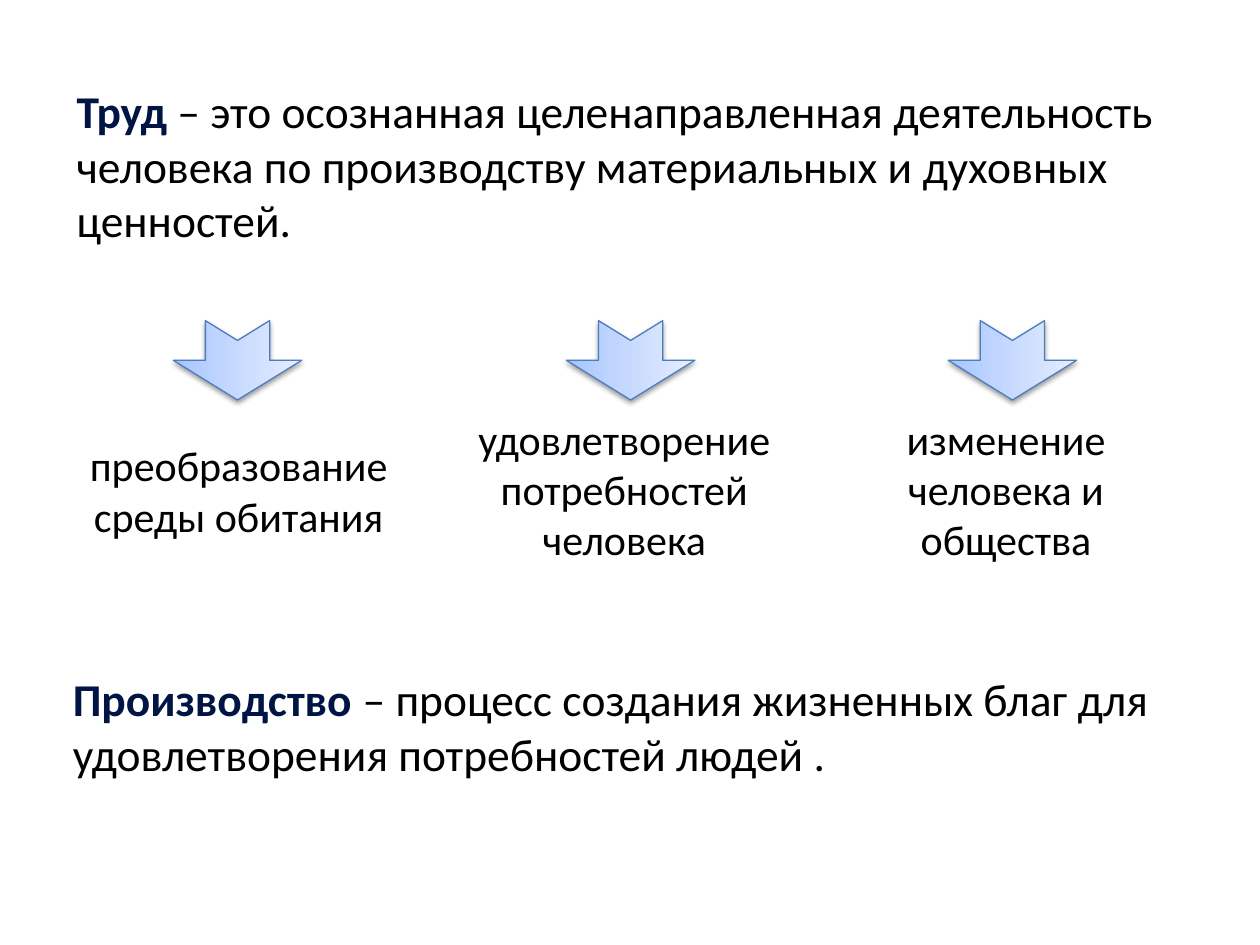
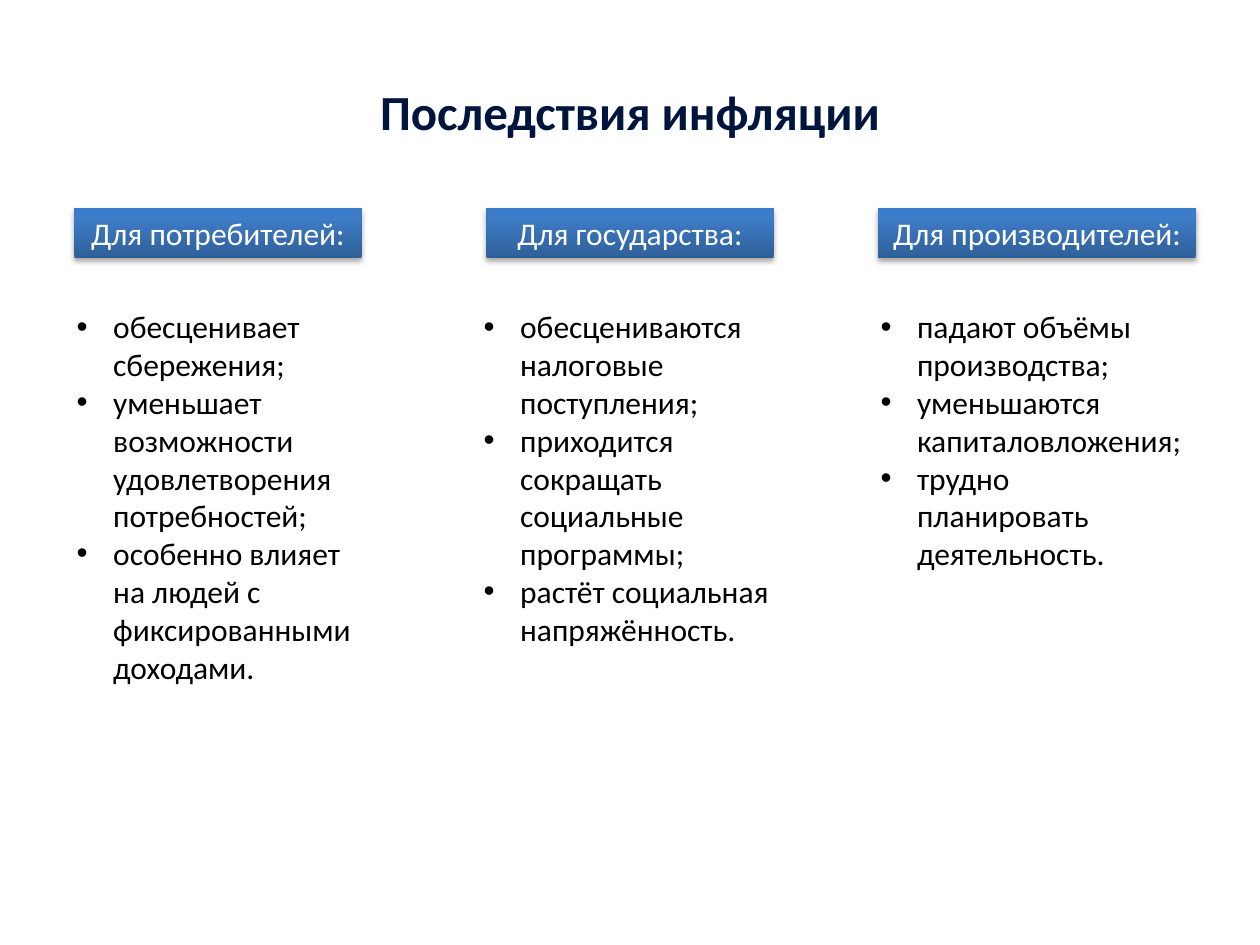
from dataclasses import dataclass

from lxml import etree
from pptx import Presentation
from pptx import util as u
from pptx.dml.color import RGBColor
from pptx.enum import shapes, text
from pptx.oxml.ns import qn


@dataclass(frozen=True)
class Theme:
    font: str = "Calibri"
    term: str = "001543"
    title: str = "00153E"
    body: str = "000000"
    light: str = "FFFFFF"
    arrow_line: str = "4B7EBC"
    arrow_stops: tuple = ((0, "A4C4FF"), (35, "BFD4FF"), (100, "E6EEFF"))
    header_stops: tuple = ((0, "2F5F99"), (80, "3D7CC7"), (100, "3A7CCB"))
    title_size: int = 28
    definition_size: int = 26
    label_size: int = 24
    list_size: int = 18
    bullet_indent: float = 0.29


THEME = Theme()


# Text
def add_bullet(paragraph):
    properties = paragraph._p.get_or_add_pPr()
    indent = u.Inches(THEME.bullet_indent)
    properties.set("marL", str(indent))
    properties.set("indent", str(-indent))
    etree.SubElement(properties, qn("a:buFont")).set("typeface", "Arial")
    etree.SubElement(properties, qn("a:buChar")).set("char", "•")


def write_text(frame, paragraphs, *, size, color=THEME.body, align=None, bullets=False):
    """Fill a frame; each paragraph is a string or a list of (text, color, bold)."""
    frame.word_wrap = True
    for index, content in enumerate(paragraphs):
        paragraph = frame.add_paragraph() if index else frame.paragraphs[0]
        if bullets:
            add_bullet(paragraph)
        paragraph.alignment = align
        runs = [(content, color, False)] if isinstance(content, str) else content
        for words, run_color, bold in runs:
            run = paragraph.add_run()
            run.text = words
            run.font.name = THEME.font
            run.font.size = u.Pt(size)
            run.font.bold = bold
            run.font.color.rgb = RGBColor.from_string(run_color)


def add_text(slide, box, paragraphs, **text_format):
    frame = slide.shapes.add_textbox(*map(u.Inches, box)).text_frame
    write_text(frame, paragraphs, **text_format)
    frame.auto_size = text.MSO_AUTO_SIZE.SHAPE_TO_FIT_TEXT


def add_definition(slide, box, term, meaning):
    runs = [(term + " ", THEME.term, True), (meaning, THEME.body, False)]
    add_text(slide, box, [runs], size=THEME.definition_size)


# Shapes
def add_gradient_shape(slide, kind, box, stops, *, shadow_opacity, shadow_distance):
    shape = slide.shapes.add_shape(kind, *map(u.Inches, box))
    shape.fill.gradient()
    shape.fill.gradient_angle = 90
    properties = shape._element.spPr
    stop_list = properties.find(".//" + qn("a:gsLst"))
    stop_list.clear()
    for position, color in stops:
        stop = etree.SubElement(stop_list, qn("a:gs"), pos=str(position * 1000))
        etree.SubElement(stop, qn("a:srgbClr"), val=color)
    shape.line.fill.background()

    shape.shadow.inherit = False
    shadow = etree.SubElement(
        properties.find(qn("a:effectLst")), qn("a:outerShdw"),
        blurRad=str(u.Pt(3.1)), dist=str(u.Pt(shadow_distance)),
        dir="5400000", rotWithShape="0")
    shadow_color = etree.SubElement(shadow, qn("a:srgbClr"), val=THEME.body)
    etree.SubElement(shadow_color, qn("a:alpha"), val=str(shadow_opacity * 1000))
    return shape


def add_down_arrow(slide, left):
    arrow = add_gradient_shape(
        slide, shapes.MSO_SHAPE.NOTCHED_RIGHT_ARROW, (left, 2.35, 0.63, 1.02),
        THEME.arrow_stops, shadow_opacity=38, shadow_distance=1.6)
    arrow.rotation = 90
    arrow.line.color.rgb = RGBColor.from_string(THEME.arrow_line)
    arrow.line.width = u.Pt(0.75)


def add_header(slide, left, width, caption):
    header = add_gradient_shape(
        slide, shapes.MSO_SHAPE.RECTANGLE, (left, 1.65, width, 0.4),
        THEME.header_stops, shadow_opacity=35, shadow_distance=1.8)
    header.text_frame.vertical_anchor = text.MSO_ANCHOR.MIDDLE
    write_text(header.text_frame, [caption], size=THEME.list_size,
               color=THEME.light, align=text.PP_ALIGN.CENTER)


# Slides
def build_labour_slide(slide):
    add_definition(slide, (0.51, 0.61, 8.9, 1.41), "Труд",
                   "– это осознанная целенаправленная деятельность человека "
                   "по производству материальных и духовных ценностей.")
    goals = [
        (1.57, (0.48, 3.44, 2.83, 0.91), "преобразование среды обитания"),
        (4.69, (3.54, 3.23, 2.83, 1.31), "удовлетворение потребностей человека"),
        (7.72, (6.57, 3.23, 2.83, 1.31), "изменение человека и общества"),
    ]
    for arrow_left, label_box, label in goals:
        add_down_arrow(slide, arrow_left)
        add_text(slide, label_box, [label], size=THEME.label_size,
                 align=text.PP_ALIGN.CENTER)
    add_definition(slide, (0.48, 5.28, 8.9, 0.98), "Производство",
                   "– процесс создания жизненных благ для удовлетворения "
                   "потребностей людей .")


def build_inflation_slide(slide):
    add_text(slide, (1.85, 0.6, 6.3, 0.57),
             [[("Последствия инфляции", THEME.title, True)]],
             size=THEME.title_size, align=text.PP_ALIGN.CENTER)
    # Header left and width, caption, list box, effects
    columns = [
        (0.59, 2.28, "Для потребителей:", (0.51, 2.39, 2.52, 3.13),
         ["обесценивает сбережения;",
          "уменьшает возможности удовлетворения потребностей;",
          "особенно влияет на людей с фиксированными доходами."]),
        (3.86, 2.28, "Для государства:", (3.74, 2.39, 2.47, 3.13),
         ["обесцениваются налоговые поступления;",
          "приходится сокращать социальные программы;",
          "растёт социальная напряжённость."]),
        (6.97, 2.52, "Для производителей:", (6.89, 2.39, 2.6, 2.22),
         ["падают объёмы производства;",
          "уменьшаются капиталовложения;",
          "трудно планировать деятельность."]),
    ]
    for left, width, caption, list_box, effects in columns:
        add_header(slide, left, width, caption)
        add_text(slide, list_box, effects, size=THEME.list_size, bullets=True)


def main():
    presentation = Presentation()
    presentation.slide_width = u.Inches(10)
    presentation.slide_height = u.Inches(7.5)
    blank_layout = presentation.slide_layouts[6]
    for build in (build_labour_slide, build_inflation_slide):
        build(presentation.slides.add_slide(blank_layout))
    presentation.save("out.pptx")


if __name__ == "__main__":
    main()
